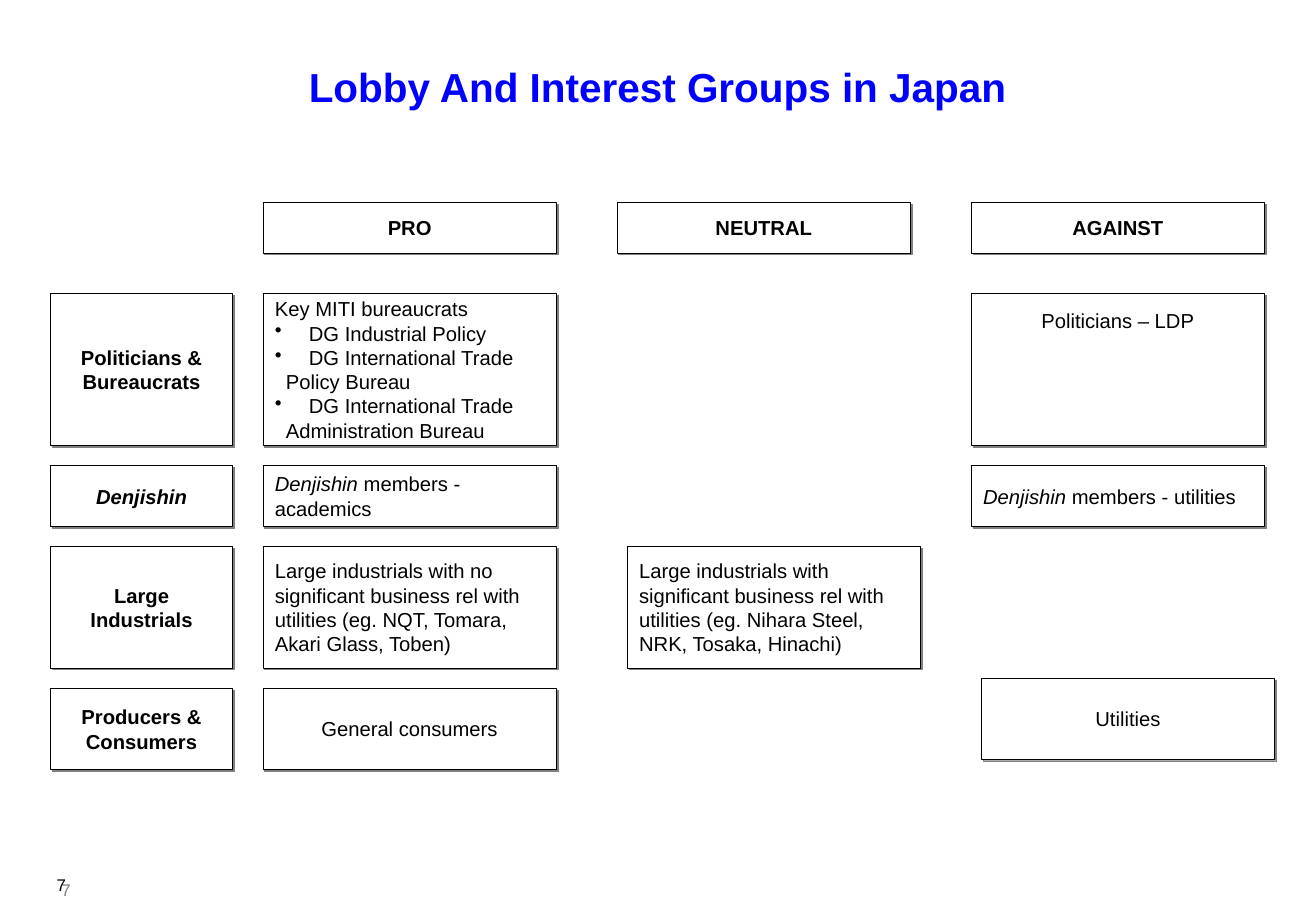
import dataclasses
import itertools

import lxml.etree
import pptx
import pptx.dml.color
import pptx.enum.shapes
import pptx.enum.text
import pptx.oxml.ns
import pptx.util

ALIGN = pptx.enum.text.PP_ALIGN
ANCHOR = pptx.enum.text.MSO_ANCHOR


@dataclasses.dataclass(frozen=True)
class Theme:
    """Colours, type sizes and line widths of the slide."""
    font: str = "Arial"
    ink: str = "000000"
    title: str = "0000FF"
    paper: str = "FFFFFF"
    shadow: str = "808080"
    title_size: int = 24
    body_size: int = 12
    page_size: int = 10
    line: float = 0.25


THEME = Theme()

UNIT = 1 / 12
LABEL_LEFT, LABEL_WIDTH = 5, 18
STANCE_LEFT, STANCE_WIDTH, STANCE_STEP = 26, 29, 35
HEADER_TOP, HEADER_HEIGHT = 20, 5
ROWS_TOP, ROW_GAP = 29, 2
ROW_HEIGHTS = (15, 6, 12, 8)
ROW_TOPS = [ROWS_TOP + y for y in itertools.accumulate(
    (h + ROW_GAP for h in ROW_HEIGHTS[:-1]), initial=0)]
BULLET_INDENT, WRAP_INDENT = 0.28, 0.09

STANCES = ("PRO", "NEUTRAL", "AGAINST")
PRO, NEUTRAL, AGAINST = range(3)
ITALIC = {"italic": True}
BOLD = {"bold": True}
GROUPS = (
    [("Politicians & Bureaucrats", BOLD)],
    [("Denjishin", BOLD | ITALIC)],
    [("Large Industrials", BOLD)],
    [("Producers & Consumers", BOLD)],
)
BUREAUCRATS = (
    ("Key MITI bureaucrats", "plain"),
    ("DG Industrial Policy", "bullet"),
    ("DG International Trade", "bullet"),
    ("Policy Bureau", "wrapped"),
    ("DG International Trade", "bullet"),
    ("Administration Bureau", "wrapped"),
)
POSITIONS = (
    (0, PRO, (0, 0), [([(text, {})], kind) for text, kind in BUREAUCRATS], {}),
    (0, AGAINST, (0, 0), [([("Politicians – LDP", {})], "centre")],
     {"vertical_anchor": ANCHOR.TOP, "margin_top": pptx.util.Inches(0.12)}),
    (1, PRO, (0, 0), [([("Denjishin", ITALIC), (" members - academics", {})], "plain")], {}),
    (1, AGAINST, (0, 0), [([("Denjishin", ITALIC), (" members - utilities", {})], "plain")], {}),
    (2, PRO, (0, 0), [([("Large industrials with no significant business rel with "
                         "utilities (eg. NQT, Tomara, Akari Glass, Toben)", {})], "plain")], {}),
    (2, NEUTRAL, (1, 0), [([("Large industrials with significant business rel with "
                             "utilities (eg. Nihara Steel, NRK, Tosaka, Hinachi)", {})], "plain")], {}),
    (3, PRO, (0, 0), [([("General consumers", {})], "centre")], {}),
    (3, AGAINST, (1, -1), [([("Utilities", {})], "centre")], {}),
)


def set_all(obj, values):
    """Set every attribute named in values."""
    for name, value in values.items():
        setattr(obj, name, value)


def rgb(code):
    """Turn a hex code into a colour."""
    return pptx.dml.color.RGBColor.from_string(code)


def grid(left, top, width, height):
    """Turn grid units into lengths."""
    return [pptx.util.Inches(n * UNIT) for n in (left, top, width, height)]


def add_shadow(sp, distance):
    """Give a shape a sharp shadow to the lower right."""
    sp.shadow.inherit = False
    effects = sp._element.spPr.find(pptx.oxml.ns.qn("a:effectLst"))
    shadow = lxml.etree.SubElement(
        effects, pptx.oxml.ns.qn("a:outerShdw"),
        dist=str(pptx.util.Pt(distance)), dir="2700000", algn="ctr", rotWithShape="0")
    lxml.etree.SubElement(shadow, pptx.oxml.ns.qn("a:srgbClr"), val=THEME.shadow)


def set_indent(p, kind):
    """Indent a bulleted or wrapped line."""
    pPr = p._p.get_or_add_pPr()
    if kind == "bullet":
        pPr.set("marL", str(pptx.util.Inches(BULLET_INDENT)))
        pPr.set("indent", str(pptx.util.Inches(-BULLET_INDENT)))
        lxml.etree.SubElement(pPr, pptx.oxml.ns.qn("a:buChar"), char="•")
    elif kind == "wrapped":
        pPr.set("marL", str(pptx.util.Inches(WRAP_INDENT)))


def write(tf, lines, size=THEME.body_size, color=THEME.ink):
    """Fill a text frame with lines of formatted runs."""
    for i, (runs, kind) in enumerate(lines):
        p = tf.paragraphs[0] if i == 0 else tf.add_paragraph()
        p.alignment = ALIGN.CENTER if kind == "centre" else ALIGN.LEFT
        set_indent(p, kind)
        for text, style in runs:
            r = p.add_run()
            r.text = text
            set_all(r.font, {"name": THEME.font, "size": pptx.util.Pt(size), **style})
            r.font.color.rgb = rgb(color)


def add_card(s, box, lines, frame=None):
    """Draw a shadowed white box with text."""
    sp = s.shapes.add_shape(pptx.enum.shapes.MSO_SHAPE.RECTANGLE, *box)
    sp.fill.solid()
    sp.fill.fore_color.rgb = rgb(THEME.paper)
    sp.line.color.rgb = rgb(THEME.ink)
    sp.line.width = pptx.util.Pt(THEME.line)
    add_shadow(sp, 1.4)
    set_all(sp.text_frame, {"word_wrap": True, "vertical_anchor": ANCHOR.MIDDLE, **(frame or {})})
    write(sp.text_frame, lines)


def add_title(s, box):
    """Write the slide title."""
    tf = s.shapes.add_textbox(*box).text_frame
    set_all(tf, {"word_wrap": True, "vertical_anchor": ANCHOR.MIDDLE})
    write(tf, [([("Lobby And Interest Groups in Japan", BOLD)], "centre")],
          THEME.title_size, THEME.title)


def add_page_number(s, box):
    """Write the shadowed page number."""
    sp = s.shapes.add_textbox(*box)
    add_shadow(sp, 4)
    sp.text_frame.word_wrap = True
    write(sp.text_frame, [([("7", {})], "centre")], THEME.page_size)


def add_headers(s, left, top):
    """Draw the stance headings from the given corner."""
    for i, stance in enumerate(STANCES):
        add_card(s, grid(left + i * STANCE_STEP, top, STANCE_WIDTH, HEADER_HEIGHT),
                 [([(stance, BOLD)], "centre")])


def add_groups(s, left):
    """Draw the interest group labels down the given column."""
    for runs, top, height in zip(GROUPS, ROW_TOPS, ROW_HEIGHTS):
        add_card(s, grid(left, top, LABEL_WIDTH, height), [(runs, "centre")])


def add_positions(s, left):
    """Draw each group's members under their stance."""
    for row, stance, (dx, dy), lines, frame in POSITIONS:
        box = grid(left + stance * STANCE_STEP + dx, ROW_TOPS[row] + dy,
                   STANCE_WIDTH, ROW_HEIGHTS[row])
        add_card(s, box, lines, frame)


def main():
    """Build and save the slide."""
    prs = pptx.Presentation()
    prs.slide_width = pptx.util.Inches(10.84)
    prs.slide_height = pptx.util.Inches(7.5)
    s = prs.slides.add_slide(prs.slide_layouts[6])
    add_page_number(s, [pptx.util.Inches(n) for n in (0.09, 7.15, 0.83, 0.27)])
    add_title(s, grid(3, 3, 124, 11))
    add_headers(s, STANCE_LEFT, HEADER_TOP)
    add_groups(s, LABEL_LEFT)
    add_positions(s, STANCE_LEFT)
    prs.save("out.pptx")


if __name__ == "__main__":
    main()
